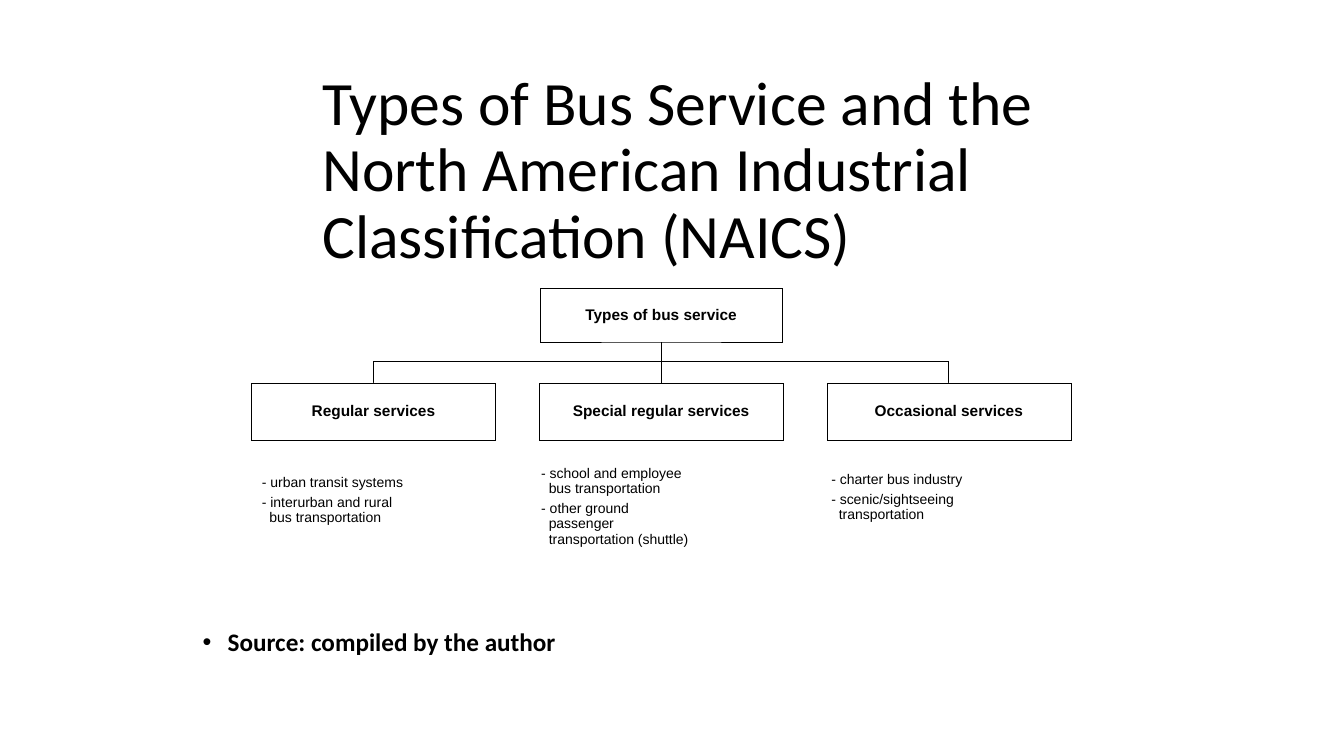
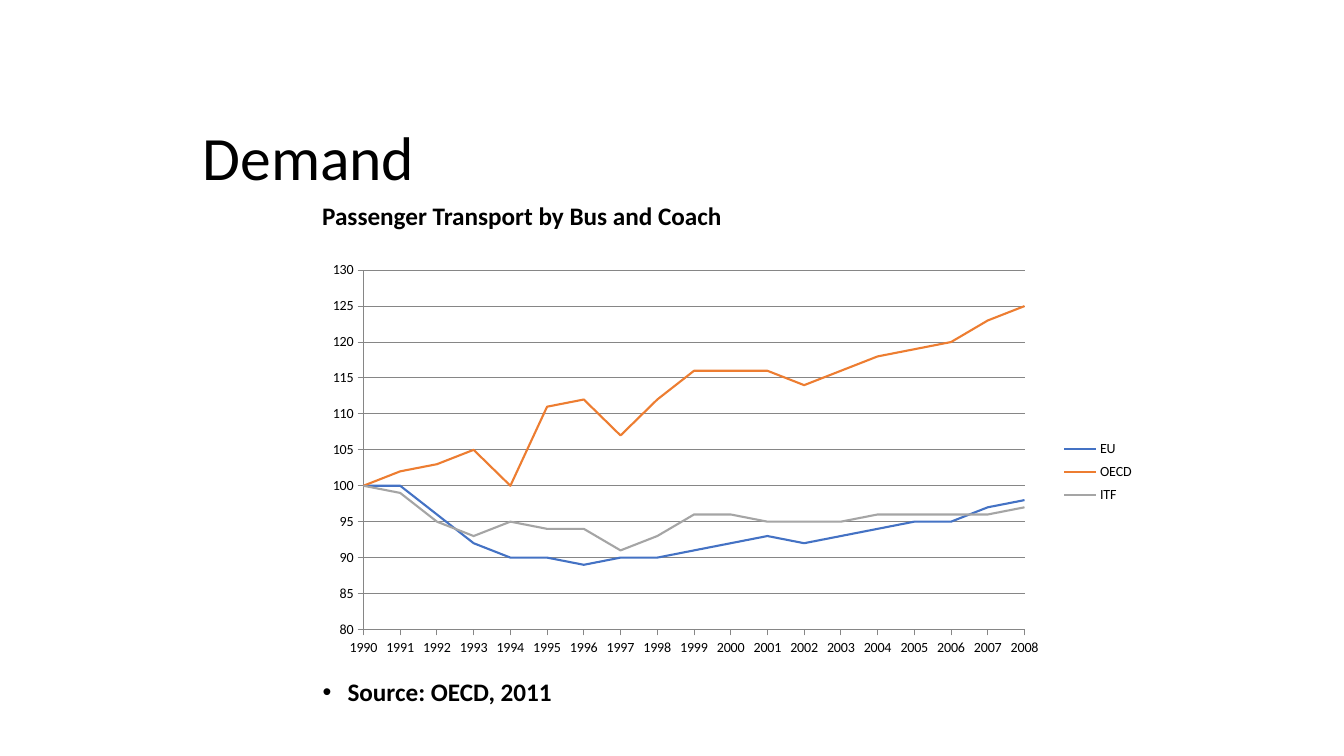
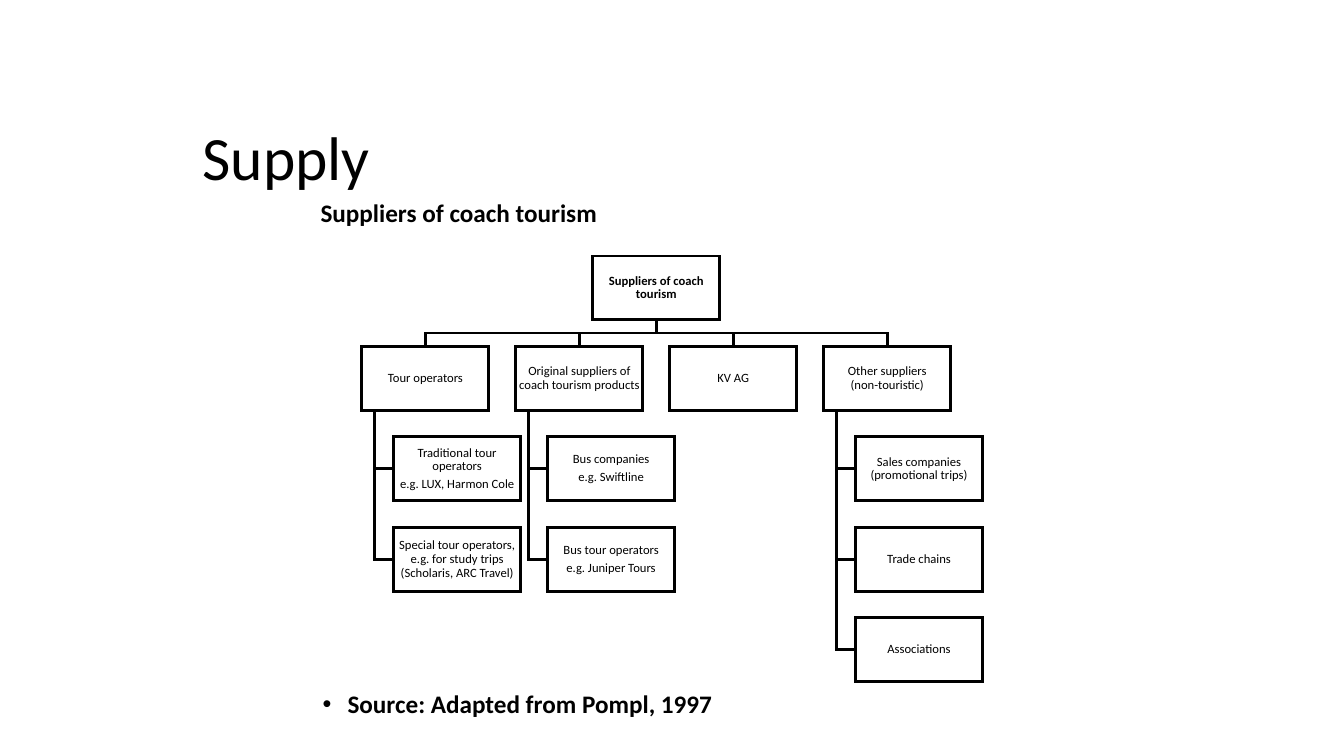
from copy import deepcopy

from lxml import etree
from pptx import Presentation
from pptx.chart.data import CategoryChartData
from pptx.dml.color import RGBColor
from pptx.enum.chart import XL_CHART_TYPE as ChartType, XL_LEGEND_POSITION as LegendPosition
from pptx.enum.chart import XL_TICK_MARK as TickMark
from pptx.enum.shapes import MSO_CONNECTOR as Connector, MSO_SHAPE as Shape
from pptx.enum.text import MSO_ANCHOR as Anchor, MSO_AUTO_SIZE as AutoSize, PP_ALIGN as Align
from pptx.oxml.ns import qn
from pptx.util import Cm, Pt

BLACK, WHITE, GREY = "000000", "FFFFFF", "868686"
BOTTOM, TOP = 2, 0  # connection sites


def paint(fill, color):
    fill.solid()
    fill.fore_color.rgb = RGBColor.from_string(color)


def write(shape, text, size=18, font="Calibri", bold=False, align=Align.LEFT, anchor=Anchor.TOP,
          inset=None, spacing=0.9, after=0, hang=0, bullet=None):
    """Fill a shape; a new line starts a paragraph, a vertical tab breaks the line."""
    frame = shape.text_frame
    frame.word_wrap = True
    frame.auto_size = AutoSize.NONE
    frame.vertical_anchor = anchor
    if inset is not None:
        frame.margin_left = frame.margin_right = frame.margin_top = frame.margin_bottom = Cm(inset)
    frame.text = text
    for para in frame.paragraphs:
        para.alignment = align
        para.line_spacing = spacing
        para.space_before = Pt(0)
        para.space_after = Pt(after)
        props = para._p.get_or_add_pPr()
        if hang:
            props.set("marL", str(Cm(hang)))
            props.set("indent", str(-Cm(hang)))
        if bullet:
            etree.SubElement(props, qn("a:buFont")).set("typeface", "Arial")
            etree.SubElement(props, qn("a:buChar")).set("char", bullet)
        for span in para.runs:
            span.font.size = Pt(size)
            span.font.name = font
            span.font.bold = bold
            paint(span.font.fill, BLACK)
        # Line breaks take the format of the text around them
        for line_break in para._p.findall(qn("a:br")):
            line_break.insert(0, deepcopy(para.runs[0]._r.rPr))


deck = Presentation()
deck.slide_width, deck.slide_height = Cm(33.87), Cm(19.05)

# Titles, subtitles and sources: title, its box, subtitle and its place, source and its place
FRAMES = [
    ("Types of Bus Service and the North American Industrial Classification (NAICS)",
     (7.87, 2.5, 20, 3.66), None, None,
     "Source: compiled by the author", (4.86, 15.75, 26.67)),
    ("Demand", (4.85, 3.43, 26.67, 1.22),
     "Passenger Transport by Bus and Coach", (7.87, 4.93),
     "Source: OECD, 2011", (7.88, 17, 20)),
    ("Supply", (4.85, 3.43, 26.67, 1.22),
     "Suppliers of coach tourism", (7.83, 4.85),
     "Source: Adapted from Pompl, 1997", (7.88, 17.3, 20)),
]
pages = []
for title, (left, top, width, height), subtitle, place, source, source_place in FRAMES:
    page = deck.slides.add_slide(deck.slide_layouts[5])
    pages.append(page)
    box = page.shapes.title
    box.left, box.top, box.width, box.height = Cm(left), Cm(top), Cm(width), Cm(height)
    write(box, title, size=44, anchor=Anchor.MIDDLE)
    if subtitle:
        box = page.shapes.add_textbox(Cm(place[0]), Cm(place[1]), Cm(20), Cm(1.02))
        write(box, subtitle, bold=True, spacing=1)
    left, top, width = source_place
    box = page.shapes.add_textbox(Cm(left), Cm(top), Cm(width), Cm(1.02))
    write(box, source, bold=True, hang=0.63, bullet="•")
service_page, demand_page, supply_page = pages

# Organisation trees: each branch has a label and the boxes hanging below it
TREES = [
    dict(page=service_page, root="Types of bus service", root_box=(13.61, 7.26, 6.11, 1.36),
         left=6.34, top=9.65, step=7.25, size=(6.15, 1.45), bus=9.12,
         weight=0.5, line=0.75, text=dict(size=11, font="Arial", after=3.85), bold=True,
         branches=[("Regular services", []), ("Special regular services", []),
                   ("Occasional services", [])]),
    dict(page=supply_page, root="Suppliers of coach tourism", root_box=(14.94, 6.45, 3.2, 1.61),
         left=9.12, top=8.73, step=3.88, size=(3.2, 1.61), bus=8.39,
         weight=2, line=2, text=dict(size=9, after=3.15), bold=False,
         branches=[
             ("Tour operators",
              ["Traditional tour operators\ne.g. LUX, Harmon Cole",
               "Special tour operators, e.g. for study trips (Scholaris, ARC Travel)"]),
             ("Original suppliers of coach tourism products",
              ["Bus companies\ne.g. Swiftline", "Bus tour operators\ne.g. Juniper Tours"]),
             ("KV AG", []),
             ("Other suppliers\v(non-touristic)",
              ["Sales companies\v(promotional trips)", "Trade chains", "Associations"]),
         ]),
]
LEAF_SHIFT, RAIL_SHIFT, LEAF_STEP = 0.8, 0.32, 2.28

for tree in TREES:
    page, bus, top = tree["page"], tree["bus"], tree["top"]
    width, height = tree["size"]
    root_left, root_top, root_width, root_height = tree["root_box"]
    center, root_bottom = root_left + root_width / 2, root_top + root_height

    # Work out the boxes, the bent links and the straight links
    boxes = [(tree["root"], tree["root_box"], True)]
    bends, straights = [], []
    for column, (label, leaves) in enumerate(tree["branches"]):
        left = tree["left"] + column * tree["step"]
        middle, rail = left + width / 2, left + RAIL_SHIFT
        if abs(middle - center) < 0.05:
            straights.append(len(boxes))
        else:
            bends.append([(center, root_bottom), (center, bus), (middle, bus), (middle, top)])
        boxes.append((label, (left, top, width, height), tree["bold"]))
        for row, leaf in enumerate(leaves, 1):
            leaf_top = top + row * LEAF_STEP
            level = leaf_top + height / 2
            bends.append([(rail, top + height), (rail, level), (left + LEAF_SHIFT, level)])
            boxes.append((leaf, (left + LEAF_SHIFT, leaf_top, width, height), False))

    # Draw the bent links
    outlines = []
    for start, *corners in bends:
        builder = page.shapes.build_freeform(Cm(start[0]), Cm(start[1]))
        builder.add_line_segments([(Cm(x), Cm(y)) for x, y in corners], close=False)
        link = builder.convert_to_shape()
        link.fill.background()
        outlines.append((link, tree["line"]))

    # Draw the boxes
    shapes = []
    for label, bounds, bold in boxes:
        box = page.shapes.add_shape(Shape.RECTANGLE, *(Cm(length) for length in bounds))
        paint(box.fill, WHITE)
        write(box, label, bold=bold, align=Align.CENTER, anchor=Anchor.MIDDLE, inset=0.03,
              **tree["text"])
        shapes.append(box)
        outlines.append((box, tree["weight"]))

    # Outline both with sharp corners
    for shape, weight in outlines:
        shape.shadow.inherit = False
        paint(shape.line.fill, BLACK)
        shape.line.width = Pt(weight)
        etree.SubElement(shape.line._get_or_add_ln(), qn("a:miter")).set("lim", "800000")

    # Draw the straight links
    for number in straights:
        link = page.shapes.add_connector(Connector.STRAIGHT, Cm(center), Cm(root_bottom),
                                         Cm(center), Cm(top))
        link.begin_connect(shapes[0], BOTTOM)
        link.end_connect(shapes[number], TOP)
        paint(link.line.fill, BLACK)
        link.line.width = Pt(tree["line"])
        etree.SubElement(link._element.spPr, qn("a:effectLst"))

# Examples below each type of service
EXAMPLES = [
    ("- urban transit systems\n- interurban and rural\vbus transportation",
     (6.57, 11.79, 6.12, 1.63)),
    ("- school and employee\vbus transportation\n"
     "- other ground\vpassenger\vtransportation (shuttle)", (13.61, 11.6, 5.72, 2.34)),
    ("- charter bus industry\n- scenic/sightseeing\vtransportation", (20.92, 11.71, 5.18, 1.65)),
]
for text, bounds in EXAMPLES:
    box = service_page.shapes.add_textbox(*(Cm(length) for length in bounds))
    write(box, text, size=10, font="Arial", anchor=Anchor.MIDDLE, inset=0.03, after=3.5, hang=0.19)

# Demand chart
SERIES = [
    ("EU", "4472C4", [100, 100, 96, 92, 90, 90, 89, 90, 90, 91, 92, 93, 92, 93, 94, 95, 95, 97,
                      98]),
    ("OECD", "ED7D31", [100, 102, 103, 105, 100, 111, 112, 107, 112, 116, 116, 116, 114, 116, 118,
                        119, 120, 123, 125]),
    ("ITF", "A5A5A5", [100, 99, 95, 93, 95, 94, 94, 91, 93, 96, 96, 95, 95, 95, 96, 96, 96, 96,
                       97]),
]
data = CategoryChartData()
data.categories = [str(year) for year in range(1990, 2009)]
for name, color, values in SERIES:
    data.add_series(name, values)
chart = demand_page.shapes.add_chart(ChartType.LINE, Cm(7.54), Cm(6.25), Cm(23.14), Cm(11.18),
                                     data).chart
chart.has_title = False
chart.font.name, chart.font.size = "Calibri", Pt(10)
paint(chart.font.fill, BLACK)
chart.plots[0].vary_by_categories = False
for series, (name, color, values) in zip(chart.plots[0].series, SERIES):
    series.smooth = False
    paint(series.format.line.fill, color)
    series.format.line.width = Pt(1.5)

# Axes
years, index = chart.category_axis, chart.value_axis
index.minimum_scale, index.maximum_scale, index.major_unit = 80, 130, 5
index.has_major_gridlines = True
for axis in (years, index):
    axis.major_tick_mark, axis.minor_tick_mark = TickMark.OUTSIDE, TickMark.NONE
for part in (years, index, index.major_gridlines):
    paint(part.format.line.fill, GREY)
    part.format.line.width = Pt(0.75)

# Lines start on the value axis
for old in index._element.findall(qn("c:crossBetween")):
    index._element.remove(old)
crossing = etree.Element(qn("c:crossBetween"))
crossing.set("val", "midCat")
index._element.find(qn("c:crosses")).addnext(crossing)

# Legend, and fixed places for the plot and the legend
chart.has_legend = True
chart.legend.position = LegendPosition.RIGHT
chart.legend.include_in_layout = False
plot_area = chart._chartSpace.chart.plotArea
MODES = [("xMode", "edge"), ("yMode", "edge")]
for part, position, places in [
    (plot_area, 0, [("layoutTarget", "inner"), *MODES,
                    ("x", 0.07), ("y", 0.05), ("w", 0.72), ("h", 0.81)]),
    (chart.legend._element, 1, [*MODES, ("x", 0.82), ("y", 0.42), ("w", 0.1), ("h", 0.17)]),
]:
    for old in part.findall(qn("c:layout")):
        part.remove(old)
    layout = etree.Element(qn("c:layout"))
    manual = etree.SubElement(layout, qn("c:manualLayout"))
    for tag, value in places:
        etree.SubElement(manual, qn("c:" + tag)).set("val", str(value))
    part.insert(position, layout)

deck.save("out.pptx")
